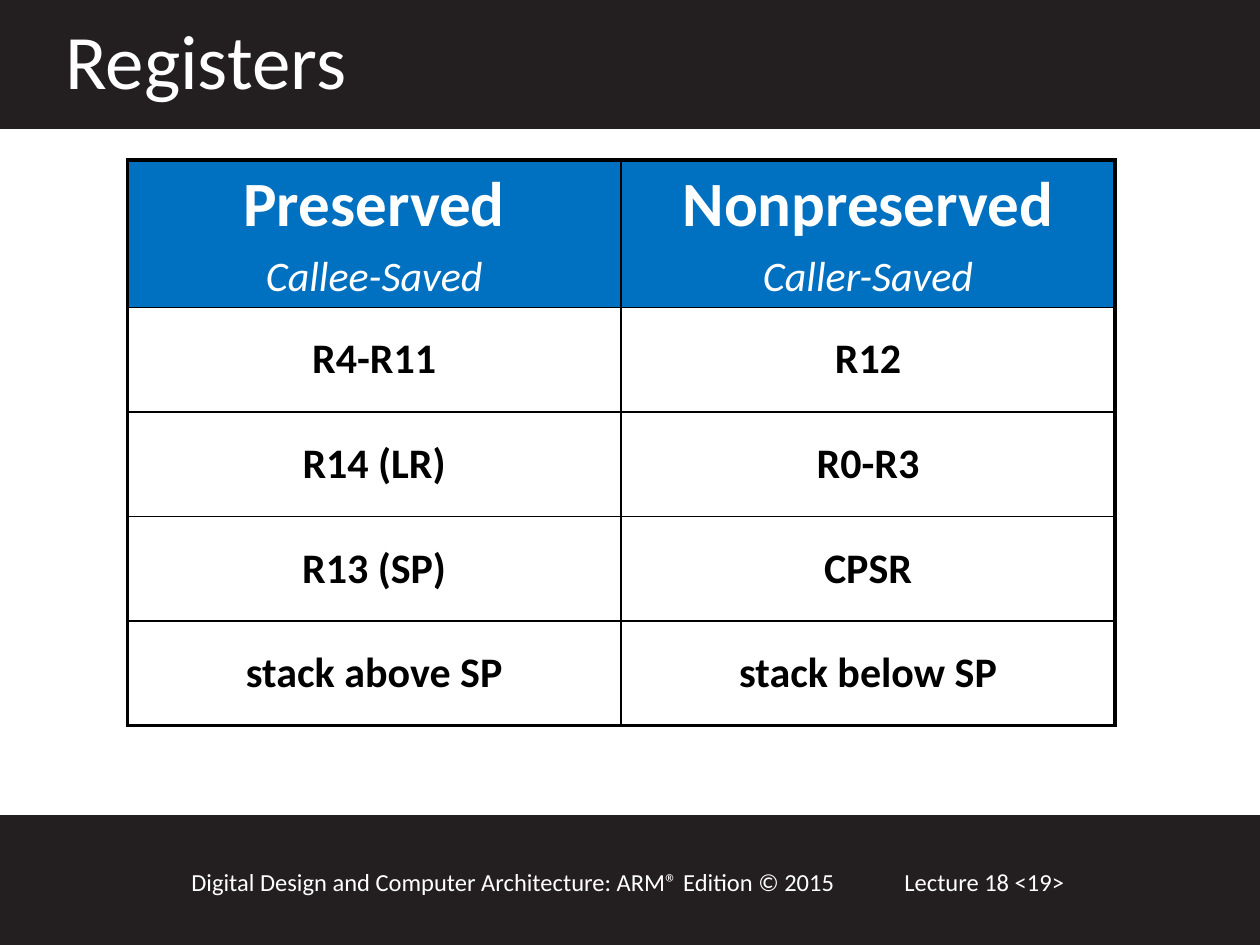
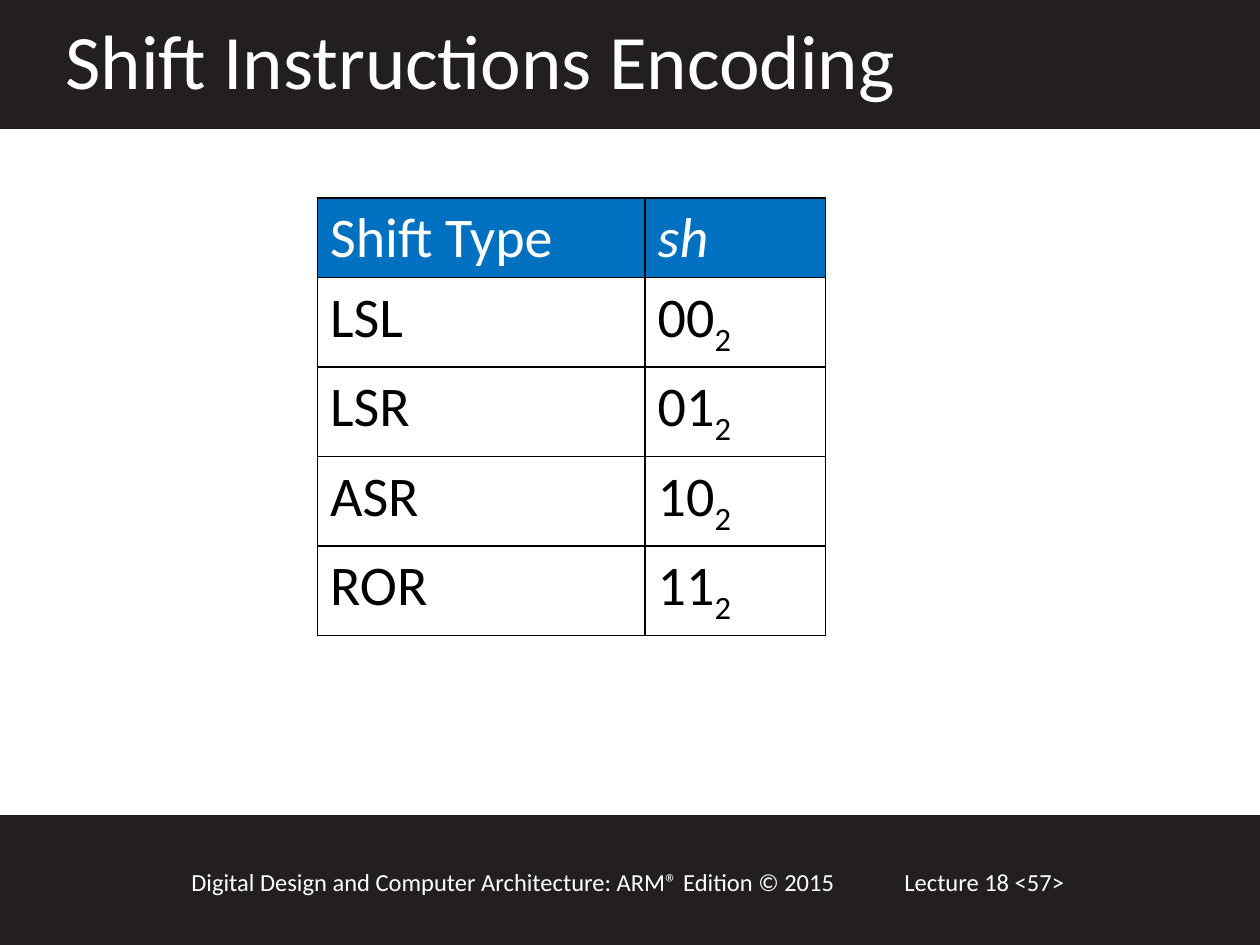
from dataclasses import dataclass

from lxml import etree
from pptx import Presentation
from pptx.dml.color import RGBColor
from pptx.enum.shapes import MSO_SHAPE
from pptx.enum.text import MSO_ANCHOR, PP_ALIGN
from pptx.oxml.ns import qn
from pptx.util import Emu, Inches, Pt

RECTANGLE = MSO_SHAPE.RECTANGLE
LEFT, CENTER = PP_ALIGN.LEFT, PP_ALIGN.CENTER
TOP, MIDDLE = MSO_ANCHOR.TOP, MSO_ANCHOR.MIDDLE

SLIDE_WIDTH, SLIDE_HEIGHT = Inches(10), Inches(7.5)
GRID_COLUMNS, GRID_ROWS = 100, 75
FONT = "Calibri"
BAND, HEADER, WHITE, BLACK = "231F20", "0070C0", "FFFFFF", "000000"
THIN, THICK = 1, 2.25
SUBTITLE_GAP = 4.5
FOOTER = "Digital Design and Computer Architecture: ARM® Edition © 2015"


@dataclass(frozen=True)
class Box:
    left: float
    top: float
    width: float
    height: float

    def place(self) -> tuple[Emu, Emu, Emu, Emu]:
        return across(self.left), down(self.top), across(self.width), down(self.height)


@dataclass(frozen=True)
class Span:
    text: str
    size: float
    color: str = BLACK
    bold: bool = False
    italic: bool = False
    subscript: bool = False


Cell = list[list[Span]]


@dataclass(frozen=True)
class TableLayout:
    left: float
    top: float
    columns: list[float]
    header_height: float
    row_height: float
    outer_line: float
    align: PP_ALIGN
    anchor: MSO_ANCHOR


BANDS = [Box(0, 64.8, 100, 10.2), Box(0, 0, 100, 10.1)]
TITLE_BOX = Box(4.2, 0.5, 94.9, 8.4)
LECTURE_BOX = Box(70.8, 68.3, 21.7, 3.4)
FOOTER_BOX = Box(14.2, 68.3, 57.5, 3.4)

REGISTER_LAYOUT = TableLayout(10.1, 12.7, [39.2, 39.2], 11.7, 8.3, THICK, CENTER, MIDDLE)
SHIFT_LAYOUT = TableLayout(25.2, 15.7, [26, 14.3], 6.3, 7.1, THIN, LEFT, TOP)

REGISTER_HEADINGS = [("Preserved", "Callee-Saved"), ("Nonpreserved", "Caller-Saved")]
REGISTERS = [
    ("R4-R11", "R12"),
    ("R14 (LR)", "R0-R3"),
    ("R13 (SP)", "CPSR"),
    ("stack above SP", "stack below SP"),
]
SHIFTS = ["LSL", "LSR", "ASR", "ROR"]


def across(columns: float) -> Emu:
    return Emu(round(SLIDE_WIDTH * columns / GRID_COLUMNS))


def down(rows: float) -> Emu:
    return Emu(round(SLIDE_HEIGHT * rows / GRID_ROWS))


def rgb(color: str) -> RGBColor:
    return RGBColor.from_string(color)


def add_span(paragraph, span: Span) -> None:
    run = paragraph.add_run()
    run.text = span.text
    font = run.font
    font.name, font.size = FONT, Pt(span.size)
    font.bold, font.italic = span.bold, span.italic
    font.color.rgb = rgb(span.color)
    if span.subscript:
        run._r.get_or_add_rPr().set("baseline", "-25000")


def add_band(slide, box: Box) -> None:
    shape = slide.shapes.add_shape(RECTANGLE, *box.place())
    shape.shadow.inherit = False
    shape.fill.solid()
    shape.fill.fore_color.rgb = rgb(BAND)
    shape.line.color.rgb = rgb(BAND)
    shape.line.width = Pt(2)


def add_text(slide, box: Box, span: Span) -> None:
    frame = slide.shapes.add_textbox(*box.place()).text_frame
    frame.word_wrap = True
    add_span(frame.paragraphs[0], span)


def add_border(cell, side: str, width: float) -> None:
    properties = cell._tc.get_or_add_tcPr()
    line = etree.SubElement(properties, qn(f"a:ln{side}"), w=str(Pt(width)))
    fill = etree.SubElement(line, qn("a:solidFill"))
    etree.SubElement(fill, qn("a:srgbClr"), val=BLACK)


def fill_cell(cell, content: Cell, layout: TableLayout) -> None:
    cell.vertical_anchor = layout.anchor
    frame = cell.text_frame
    for index, spans in enumerate(content):
        paragraph = frame.add_paragraph() if index else frame.paragraphs[0]
        paragraph.alignment = layout.align
        if index:
            paragraph.space_before = Pt(SUBTITLE_GAP)
        for span in spans:
            add_span(paragraph, span)


def add_table(slide, layout: TableLayout, rows: list[list[Cell]]) -> None:
    heights = [layout.header_height] + [layout.row_height] * (len(rows) - 1)
    box = Box(layout.left, layout.top, sum(layout.columns), sum(heights))
    table = slide.shapes.add_table(len(rows), len(layout.columns), *box.place()).table
    table.first_row = table.horz_banding = False
    for column, width in zip(table.columns, layout.columns):
        column.width = across(width)
    last_row, last_column = len(rows) - 1, len(layout.columns) - 1
    for row_index, (row, height) in enumerate(zip(rows, heights)):
        table.rows[row_index].height = down(height)
        for column_index, content in enumerate(row):
            cell = table.cell(row_index, column_index)
            outer_sides = {
                "L": column_index == 0,
                "R": column_index == last_column,
                "T": row_index == 0,
                "B": row_index == last_row,
            }
            for side, is_outer in outer_sides.items():
                add_border(cell, side, layout.outer_line if is_outer else THIN)
            if row_index == 0:
                cell.fill.solid()
                cell.fill.fore_color.rgb = rgb(HEADER)
            else:
                cell.fill.background()
            fill_cell(cell, content, layout)


def add_lecture_slide(presentation, title: str, number: int):
    slide = presentation.slides.add_slide(presentation.slide_layouts[6])
    for band in BANDS:
        add_band(slide, band)
    add_text(slide, LECTURE_BOX, Span(f"Lecture 18 <{number}>", 14, WHITE))
    add_text(slide, FOOTER_BOX, Span(FOOTER, 14, WHITE))
    add_text(slide, TITLE_BOX, Span(title, 44, WHITE))
    return slide


def register_rows() -> list[list[Cell]]:
    header = [
        [[Span(name, 36, WHITE, bold=True)], [Span(saver, 24, WHITE, italic=True)]]
        for name, saver in REGISTER_HEADINGS
    ]
    body = [[[[Span(text, 24, bold=True)]] for text in pair] for pair in REGISTERS]
    return [header, *body]


def shift_rows() -> list[list[Cell]]:
    header = [[[Span("Shift Type", 32, WHITE)]], [[Span("sh", 32, WHITE, italic=True)]]]
    body = [
        [[[Span(name, 32)]], [[Span(f"{code:02b}", 32), Span("2", 32, subscript=True)]]]
        for code, name in enumerate(SHIFTS)
    ]
    return [header, *body]


def main() -> None:
    presentation = Presentation()
    presentation.slide_width, presentation.slide_height = SLIDE_WIDTH, SLIDE_HEIGHT
    registers = add_lecture_slide(presentation, "Registers", 19)
    add_table(registers, REGISTER_LAYOUT, register_rows())
    shifts = add_lecture_slide(presentation, "Shift Instructions Encoding", 57)
    add_table(shifts, SHIFT_LAYOUT, shift_rows())
    presentation.save("out.pptx")


if __name__ == "__main__":
    main()
